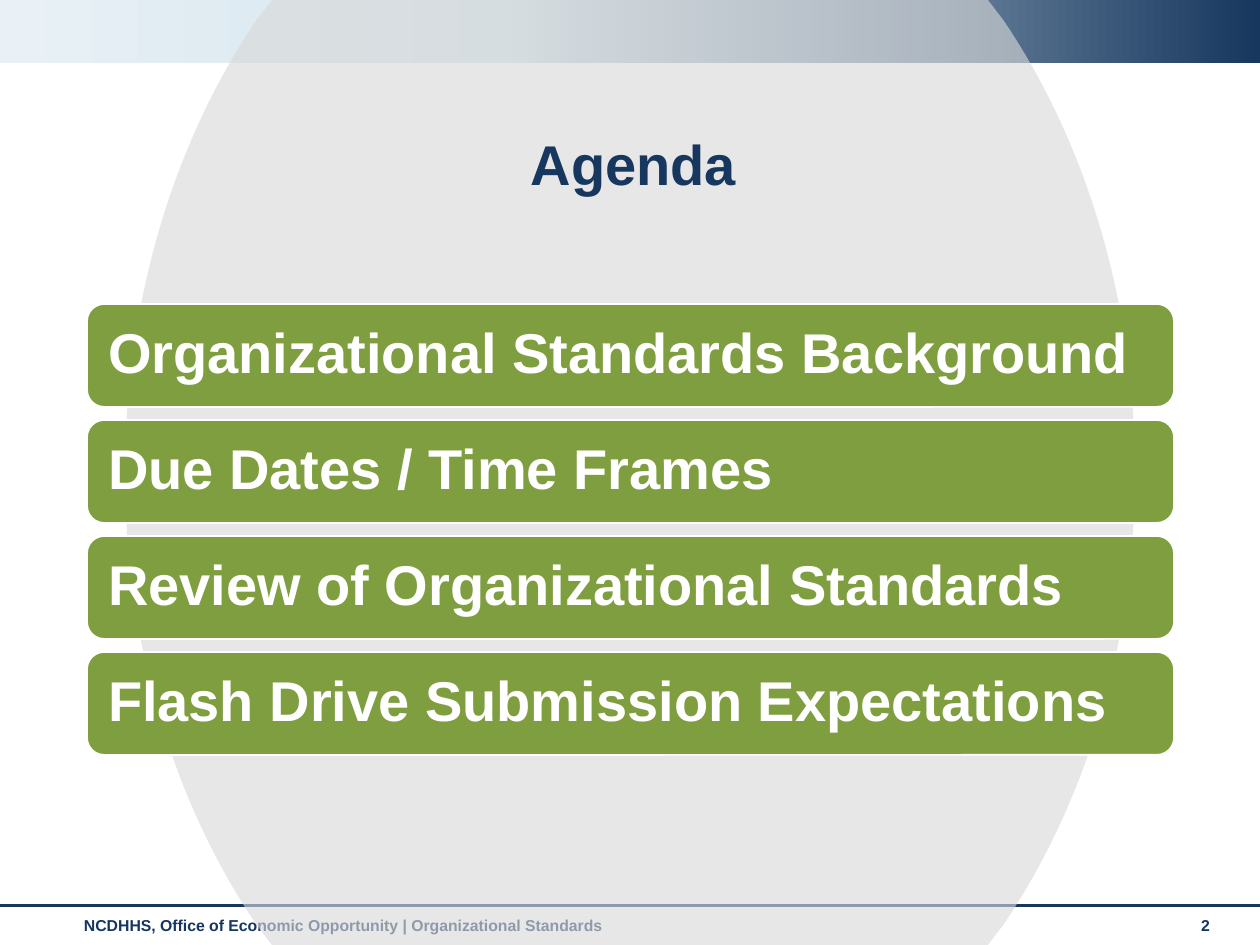
from copy import deepcopy
from dataclasses import dataclass

from lxml import etree
from pptx import Presentation
from pptx.dml.color import RGBColor
from pptx.enum.shapes import MSO_CONNECTOR, MSO_SHAPE
from pptx.enum.text import MSO_ANCHOR, PP_ALIGN
from pptx.oxml.ns import qn
from pptx.util import Emu, Pt

EMU_PER_PX = 914400 / 126
SLIDE_WIDTH, SLIDE_HEIGHT = 1260, 945

RECTANGLE = MSO_SHAPE.RECTANGLE
ROUNDED = MSO_SHAPE.ROUNDED_RECTANGLE
STRAIGHT = MSO_CONNECTOR.STRAIGHT
TOP, MIDDLE = MSO_ANCHOR.TOP, MSO_ANCHOR.MIDDLE
LEFT, CENTER = PP_ALIGN.LEFT, PP_ALIGN.CENTER

NAVY = RGBColor(0x17, 0x37, 0x5E)
FOOTER_NAVY = RGBColor(0x15, 0x36, 0x5E)
PALE_BLUE = RGBColor(0xD3, 0xE4, 0xED)
ICE_BLUE = RGBColor(0xE9, 0xF1, 0xF6)
GREY = RGBColor(0xD9, 0xD9, 0xD9)
GREEN = RGBColor(0x7F, 0x9E, 0x3F)
WHITE = RGBColor(0xFF, 0xFF, 0xFF)

BANNER_STOPS = [(0, NAVY), (0.6, PALE_BLUE), (1, ICE_BLUE)]
AGENDA_ITEMS = [
    "Organizational Standards Background",
    "Due Dates / Time Frames",
    "Review of Organizational Standards",
    "Flash Drive Submission Expectations",
]
FIRST_ITEM_TOP, ITEM_PITCH = 304, 116

# Right half of the backdrop: two points, two Bézier curves, one point.
BACKDROP_RIGHT = [
    (988, 0), (1004, 21),
    (1085, 141), (1135, 299), (1135, 472),
    (1135, 646), (1085, 804), (1004, 924),
    (988, 945),
]
BACKDROP_CURVE_STARTS = (2, 5, 11, 14)


@dataclass(frozen=True)
class Box:
    left: int
    top: int
    width: int
    height: int


@dataclass(frozen=True)
class TextStyle:
    size: int
    color: RGBColor
    align: PP_ALIGN = LEFT
    anchor: MSO_ANCHOR = TOP
    line_spacing: float = 1.0
    inset_x: int = 12
    inset_y: int = 6


@dataclass(frozen=True)
class Label:
    text: str
    box: Box
    style: TextStyle


FOOTER_STYLE = TextStyle(9, FOOTER_NAVY)
TITLE_STYLE = TextStyle(32, NAVY, CENTER, MIDDLE, 0.9, 0, 0)
ITEM_STYLE = TextStyle(32, WHITE, LEFT, MIDDLE, 0.9, 16, 16)

FOOTER_LABELS = [
    Label("NCDHHS, Office of Economic Opportunity | Organizational Standards",
          Box(72, 910, 1101, 36), FOOTER_STYLE),
    Label("2", Box(1189, 910, 55, 36), FOOTER_STYLE),
]
TITLE = Label("Agenda", Box(93, 133, 1081, 68), TITLE_STYLE)


def px(value: float) -> Emu:
    return Emu(round(value * EMU_PER_PX))


def place(box: Box) -> tuple[Emu, Emu, Emu, Emu]:
    return px(box.left), px(box.top), px(box.width), px(box.height)


def set_text(shape, text: str, style: TextStyle) -> None:
    frame = shape.text_frame
    frame.text = text
    frame.word_wrap = True
    frame.vertical_anchor = style.anchor
    frame.margin_left = frame.margin_right = px(style.inset_x)
    frame.margin_top = frame.margin_bottom = px(style.inset_y)
    paragraph = frame.paragraphs[0]
    paragraph.alignment = style.align
    paragraph.line_spacing = style.line_spacing
    font = paragraph.runs[0].font
    font.name = "Arial"
    font.size = Pt(style.size)
    font.bold = True
    font.color.rgb = style.color


def add_label(slide, label: Label) -> None:
    set_text(slide.shapes.add_textbox(*place(label.box)), label.text, label.style)


def add_banner(slide) -> None:
    banner = slide.shapes.add_shape(RECTANGLE, *place(Box(0, 0, SLIDE_WIDTH, 63)))
    banner.shadow.inherit = False
    banner.line.fill.background()
    banner.fill.gradient()
    banner.fill.gradient_angle = 180
    stop_list = banner.element.spPr.find(".//" + qn("a:gsLst"))
    stop_list.append(deepcopy(stop_list[-1]))
    for stop, (position, color) in zip(banner.fill.gradient_stops, BANNER_STOPS):
        stop.position = position
        stop.color.rgb = color


def add_footer_rule(slide) -> None:
    rule = slide.shapes.add_connector(STRAIGHT, 0, px(906), px(SLIDE_WIDTH), px(906))
    rule.line.color.rgb = NAVY
    rule.line.width = Pt(1.75)
    etree.SubElement(rule.element.spPr, qn("a:effectLst"))


def curve_segments(shape, starts: tuple[int, ...]) -> None:
    """Merge the three line segments from each start index into one Bézier curve."""
    segments = list(shape.element.spPr.iter(qn("a:lnTo")))
    for start in starts:
        first, *others = segments[start:start + 3]
        curve = etree.Element(qn("a:cubicBezTo"))
        first.addprevious(curve)
        for segment in (first, *others):
            curve.append(segment[0])
            segment.getparent().remove(segment)


def add_backdrop(slide) -> None:
    """Draw a translucent ellipse cut off at the slide's top and bottom edges."""
    left_half = [(SLIDE_WIDTH - x, SLIDE_HEIGHT - y) for x, y in BACKDROP_RIGHT]
    start = left_half.pop()
    vertices = [(px(x), px(y)) for x, y in BACKDROP_RIGHT + left_half]
    builder = slide.shapes.build_freeform(px(start[0]), px(start[1]))
    builder.add_line_segments(vertices, close=True)
    backdrop = builder.convert_to_shape()
    curve_segments(backdrop, BACKDROP_CURVE_STARTS)
    backdrop.shadow.inherit = False
    backdrop.line.fill.background()
    backdrop.fill.solid()
    backdrop.fill.fore_color.rgb = GREY
    color = backdrop.element.spPr.find(".//" + qn("a:srgbClr"))
    etree.SubElement(color, qn("a:alpha"), val="62000")


def add_agenda_item(slide, label: Label) -> None:
    item = slide.shapes.add_shape(ROUNDED, *place(label.box))
    item.shadow.inherit = False
    item.fill.solid()
    item.fill.fore_color.rgb = GREEN
    item.line.color.rgb = WHITE
    item.line.width = Pt(1)
    set_text(item, label.text, label.style)


def main() -> None:
    presentation = Presentation()
    presentation.slide_width = px(SLIDE_WIDTH)
    presentation.slide_height = px(SLIDE_HEIGHT)
    slide = presentation.slides.add_slide(presentation.slide_layouts[6])

    for label in FOOTER_LABELS:
        add_label(slide, label)
    add_banner(slide)
    add_footer_rule(slide)
    add_backdrop(slide)
    add_label(slide, TITLE)
    for row, text in enumerate(AGENDA_ITEMS):
        box = Box(87, FIRST_ITEM_TOP + row * ITEM_PITCH, 1087, 103)
        add_agenda_item(slide, Label(text, box, ITEM_STYLE))

    presentation.save("out.pptx")


if __name__ == "__main__":
    main()
